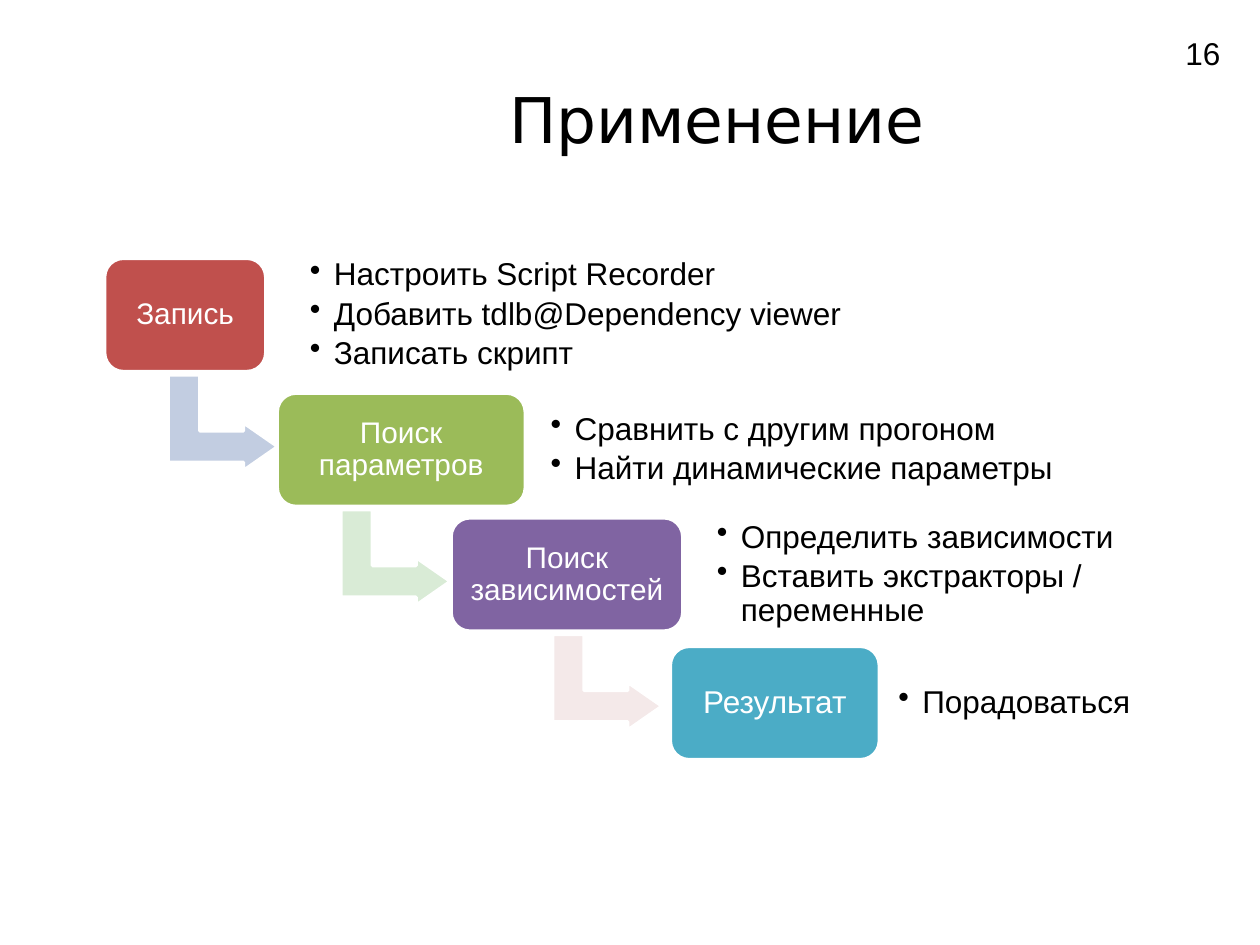
from dataclasses import dataclass

from lxml import etree
from pptx import Presentation
from pptx.dml.color import RGBColor
from pptx.enum.shapes import MSO_SHAPE
from pptx.enum.text import MSO_ANCHOR, PP_ALIGN
from pptx.oxml.ns import qn
from pptx.util import Inches, Pt

ROUNDED = MSO_SHAPE.ROUNDED_RECTANGLE
BENT_ARROW = MSO_SHAPE.BENT_UP_ARROW
MIDDLE = MSO_ANCHOR.MIDDLE
CENTER = PP_ALIGN.CENTER


@dataclass(frozen=True)
class Theme:
    text: str = "000000"
    light: str = "FFFFFF"
    title_font: str = "DejaVu Sans"
    body_font: str = "Arial"
    title_size: int = 36
    body_size: int = 18
    line_width: int = 2
    line_spacing: float = 0.9


@dataclass(frozen=True)
class Step:
    label: str
    label_size: int
    color: str
    left: float
    top: float
    width: float
    actions: tuple[str, ...]
    actions_left: float
    actions_width: float
    arrow_color: str = ""
    arrow_offset: float = 0.56


THEME = Theme()
STEP_HEIGHT = 0.9
ACTIONS_HEIGHT = 0.73
INSET = 0.07
INDENT = Inches(0.19)
ARROW_WIDTH, ARROW_HEIGHT, ARROW_DROP = 0.76, 0.87, 0.87
ARROW_ADJUSTMENTS = (0.33, 0.25, 0.36)

STEPS = (
    Step("Запись", 17, "C0504D", 0.83, 2.05, 1.28,
         ("Настроить Script Recorder", "Добавить tdlb@Dependency viewer",
          "Записать скрипт"), 2.39, 4.43, "C2CDE1"),
    Step("Поиск параметров", 17, "9BBB59", 2.2, 3.12, 1.97,
         ("Сравнить с другим прогоном", "Найти динамические параметры"),
         4.3, 5.7, "D9EBD6"),
    Step("Поиск зависимостей", 17, "8064A2", 3.58, 4.11, 1.84,
         ("Определить зависимости", "Вставить экстракторы / переменные"),
         5.62, 3.59, "F4E9E9", 0.86),
    Step("Результат", 18, "4BACC6", 5.32, 5.13, 1.66,
         ("Порадоваться",), 7.06, 2.94),
)


def add_run(paragraph, text: str, size: int, color: str,
            font: str = THEME.body_font) -> None:
    run = paragraph.add_run()
    run.text = text
    run.font.name = font
    run.font.size = Pt(size)
    run.font.color.rgb = RGBColor.from_string(color)


def prepare_frame(frame) -> None:
    frame.word_wrap = True
    frame.vertical_anchor = MIDDLE
    frame.margin_left = frame.margin_right = Inches(INSET)
    frame.margin_top = frame.margin_bottom = Inches(INSET)


def add_filled_shape(slide, kind, left: float, top: float, width: float,
                     height: float, color: str):
    shape = slide.shapes.add_shape(
        kind, Inches(left), Inches(top), Inches(width), Inches(height))
    shape.shadow.inherit = False
    shape.fill.solid()
    shape.fill.fore_color.rgb = RGBColor.from_string(color)
    shape.line.color.rgb = RGBColor.from_string(THEME.light)
    shape.line.width = Pt(THEME.line_width)
    return shape


def add_arrow(slide, step: Step) -> None:
    arrow = add_filled_shape(
        slide, BENT_ARROW, step.left + step.arrow_offset,
        step.top + ARROW_DROP, ARROW_WIDTH, ARROW_HEIGHT, step.arrow_color)
    arrow.rotation = 90
    for index, value in enumerate(ARROW_ADJUSTMENTS):
        arrow.adjustments[index] = value


def add_box(slide, step: Step) -> None:
    box = add_filled_shape(slide, ROUNDED, step.left, step.top, step.width,
                           STEP_HEIGHT, step.color)
    prepare_frame(box.text_frame)
    paragraph = box.text_frame.paragraphs[0]
    paragraph.alignment = CENTER
    paragraph.line_spacing = THEME.line_spacing
    add_run(paragraph, step.label, step.label_size, THEME.light)


def add_actions(slide, step: Step) -> None:
    top = step.top + (STEP_HEIGHT - ACTIONS_HEIGHT) / 2
    box = slide.shapes.add_textbox(
        Inches(step.actions_left), Inches(top),
        Inches(step.actions_width), Inches(ACTIONS_HEIGHT))
    frame = box.text_frame
    prepare_frame(frame)
    for index, action in enumerate(step.actions):
        paragraph = frame.paragraphs[0] if index == 0 else frame.add_paragraph()
        paragraph.level = 1
        paragraph.line_spacing = THEME.line_spacing
        paragraph.space_after = Pt(3)
        properties = paragraph._p.get_or_add_pPr()
        properties.set("marL", str(INDENT))
        properties.set("indent", str(-INDENT))
        etree.SubElement(properties, qn("a:buChar")).set("char", "•")
        add_run(paragraph, action, THEME.body_size, THEME.text)


def add_title(slide, text: str) -> None:
    title = slide.shapes.title
    title.left, title.top = Inches(1.44), Inches(0.3)
    title.width, title.height = Inches(8.5), Inches(1.28)
    title.text_frame.vertical_anchor = MIDDLE
    paragraph = title.text_frame.paragraphs[0]
    paragraph.alignment = CENTER
    add_run(paragraph, text, THEME.title_size, THEME.text, THEME.title_font)


def add_page_number(slide, number: str) -> None:
    box = slide.shapes.add_textbox(
        Inches(9.31), Inches(0.22), Inches(0.48), Inches(0.4))
    box.text_frame.word_wrap = False
    add_run(box.text_frame.paragraphs[0], number, THEME.body_size, THEME.text)


def main() -> None:
    presentation = Presentation()
    presentation.slide_width = Inches(10)
    presentation.slide_height = Inches(7.5)
    slide = presentation.slides.add_slide(presentation.slide_layouts[5])

    # Heading
    add_title(slide, "Применение")

    # Staircase of steps, each with its actions
    for step in STEPS:
        if step.arrow_color:
            add_arrow(slide, step)
        add_box(slide, step)
        add_actions(slide, step)

    # Page number
    add_page_number(slide, "16")
    presentation.save("out.pptx")


if __name__ == "__main__":
    main()
